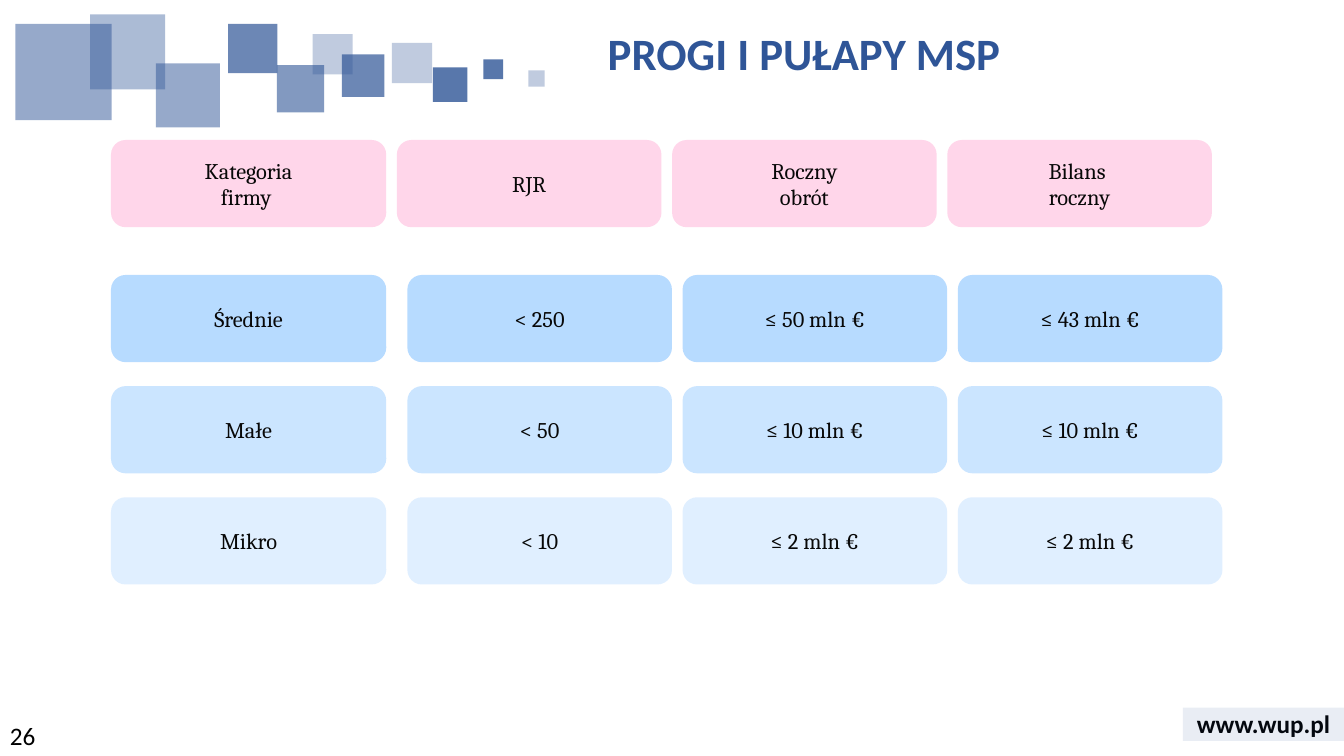
from typing import NamedTuple

from lxml import etree
from pptx import Presentation
from pptx.dml.color import RGBColor
from pptx.enum.shapes import MSO_SHAPE
from pptx.enum.text import MSO_ANCHOR, PP_ALIGN
from pptx.oxml.ns import qn
from pptx.util import Pt

RECT, ROUNDED = MSO_SHAPE.RECTANGLE, MSO_SHAPE.ROUNDED_RECTANGLE
TOP, MIDDLE = MSO_ANCHOR.TOP, MSO_ANCHOR.MIDDLE
LEFT, CENTER = PP_ALIGN.LEFT, PP_ALIGN.CENTER
NAVY, PINK, SKY, INK, BLACK = "2F5597", "FF99CC", "99CCFF", "080808", "000000"


class Box(NamedTuple):
    left: float
    top: float
    width: float
    height: float


class Square(NamedTuple):
    left: float
    top: float
    size: float
    opacity: int


class Row(NamedTuple):
    top: float
    color: str
    opacity: int
    second_left: float
    cells: tuple[str, ...]


SQUARES = [
    Square(280, 30.7, 28.8, 30), Square(309.2, 48.1, 24.7, 80),
    Square(244.2, 38.9, 30.4, 70), Square(11, 17.1, 68.8, 50),
    Square(197.8, 46.6, 33.7, 60), Square(111.4, 45.3, 45.7, 50),
    Square(64.4, 10.3, 53.6, 40), Square(345.3, 42.4, 14.1, 80),
    Square(162.9, 17.1, 35.2, 70), Square(223.3, 24.4, 28.7, 30),
    Square(377.4, 50.2, 11.7, 30),
]
ROWS = [
    Row(100, PINK, 40, 283.5,
        ("Kategoria\nfirmy ", "RJR", "Roczny\nobrót", "Bilans \nroczny")),
    Row(196.4, SKY, 70, 291, ("Średnie", "< 250", "≤ 50 mln €", "≤ 43 mln €")),
    Row(275.8, SKY, 50, 291, ("Małe", "< 50", "≤ 10 mln €", "≤ 10 mln €")),
    Row(355.2, SKY, 30, 291, ("Mikro", "< 10", "≤ 2 mln €", "≤ 2 mln €")),
]
FIRST_LEFT, FIRST_WIDTH = 79.3, 196.6
PITCH, CELL_WIDTH, CELL_HEIGHT = 196.6, 189, 62.3


def rgb(value: str) -> RGBColor:
    return RGBColor.from_string(value)


def write(sp, text: str, size: float, font: str, color: str, bold: bool = False,
          align=CENTER, anchor=MIDDLE, wrap: bool = True) -> None:
    tf = sp.text_frame
    tf.text = text
    tf.word_wrap = wrap
    tf.vertical_anchor = anchor
    for p in tf.paragraphs:
        p.alignment = align
        for r in p.runs:
            r.font.size = Pt(size)
            r.font.name = font
            r.font.bold = bold
            r.font.color.rgb = rgb(color)


def add_tinted(s, kind, box: Box, color: str, opacity: int):
    """Add a borderless shape with a translucent fill (opacity in percent)."""
    sp = s.shapes.add_shape(kind, *map(Pt, box))
    sp.shadow.inherit = False
    sp.line.fill.background()
    sp.fill.solid()
    sp.fill.fore_color.rgb = rgb(color)
    clr = sp.fill._xPr.find(qn("a:solidFill"))[0]
    etree.SubElement(clr, qn("a:alpha"), val=str(opacity * 1000))
    return sp


def add_text(s, box: Box, text: str, size: float, **style):
    sp = s.shapes.add_textbox(*map(Pt, box))
    write(sp, text, size, "Calibri", **style)
    return sp


def add_row(s, row: Row) -> None:
    for i, text in enumerate(row.cells):
        left = row.second_left + (i - 1) * PITCH if i else FIRST_LEFT
        width = CELL_WIDTH if i else FIRST_WIDTH
        box = Box(left, row.top, width, CELL_HEIGHT)
        sp = add_tinted(s, ROUNDED, box, row.color, row.opacity)
        write(sp, text, 16, "Cambria", INK, wrap=False)


def main() -> None:
    prs = Presentation()
    prs.slide_width, prs.slide_height = Pt(960), Pt(540)
    s = prs.slides.add_slide(prs.slide_layouts[6])

    add_text(s, Box(845, 502, 115, 29), "www.wup.pl", 18, color=BLACK, bold=True)
    for square in SQUARES:
        box = Box(square.left, square.top, square.size, square.size)
        add_tinted(s, RECT, box, NAVY, square.opacity)
    add_tinted(s, RECT, Box(845, 505.5, 115, 23.7), NAVY, 10)

    title = add_text(s, Box(427, 19.5, 650, 57), "PROGI I PUŁAPY MSP", 32,
                     color=NAVY, bold=True, align=LEFT, anchor=TOP)
    title.text_frame.paragraphs[0].line_spacing = 0.9
    for row in ROWS:
        add_row(s, row)
    add_text(s, Box(0, 511, 216, 29), "26", 18, color=BLACK, align=LEFT, anchor=TOP)

    prs.save("out.pptx")


if __name__ == "__main__":
    main()
